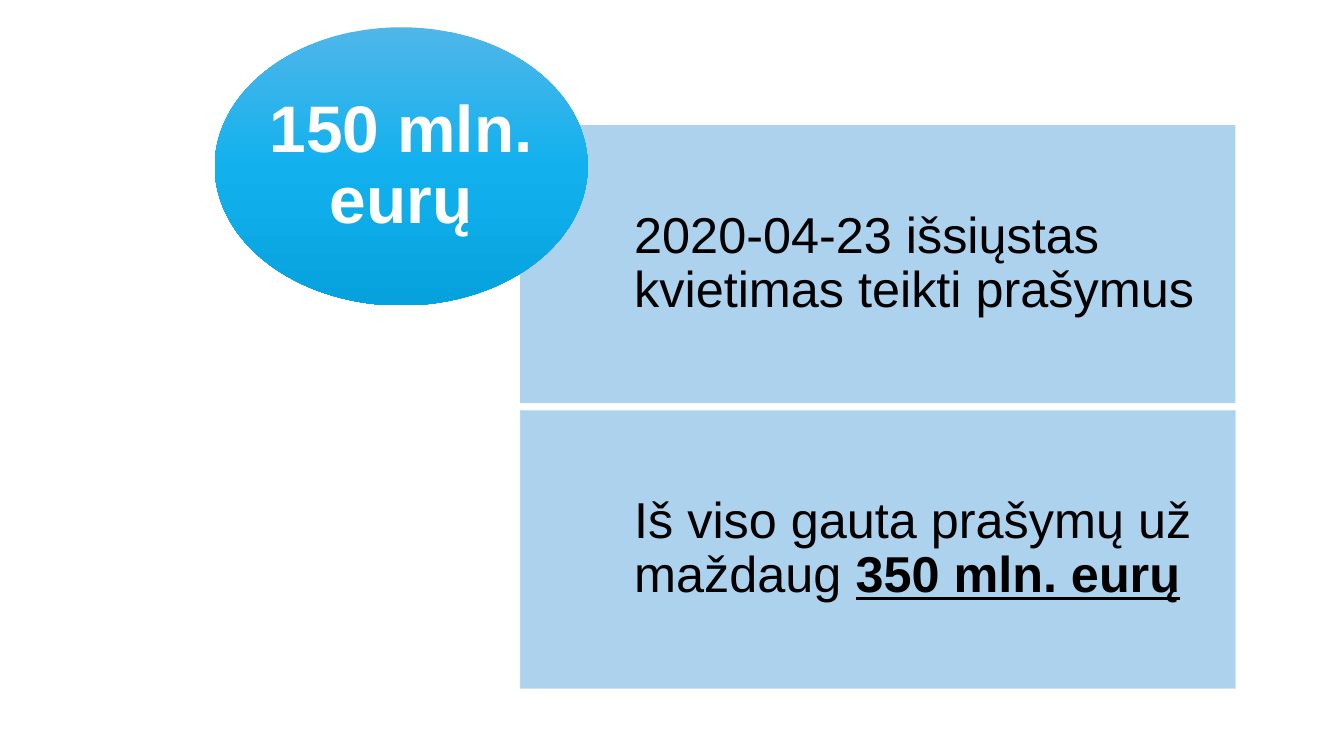
from lxml import etree
from pptx import Presentation
from pptx.dml.color import RGBColor
from pptx.enum.shapes import MSO_SHAPE
from pptx.enum.text import MSO_ANCHOR, PP_ALIGN
from pptx.oxml.ns import qn
from pptx.util import Pt

RECT, OVAL = MSO_SHAPE.RECTANGLE, MSO_SHAPE.OVAL
MIDDLE = MSO_ANCHOR.MIDDLE
LEFT, CENTER = PP_ALIGN.LEFT, PP_ALIGN.CENTER
HUES = {"panel": "A3CEED", "edge": "CDE3F5", "ink": "000000", "white": "FFFFFF",
        "light": "4FB6E9", "mid": "12B1EE", "deep": "06A2DD"}
FONT = "Arial"
CARDS = [
    [("2020-04-23 išsiųstas kvietimas teikti prašymus", False)],
    [("Iš viso gauta prašymų už maždaug ", False), ("350 mln. eurų", True)],
]


def hue(name):
    """Return the named colour."""
    return RGBColor.from_string(HUES[name])


def fade(fill_owner):
    """Make a solid fill or line 90 % opaque."""
    for tint in fill_owner.iter(qn("a:srgbClr")):
        etree.SubElement(tint, qn("a:alpha"), val="90000")


def add_form(slide, kind, box, pads):
    """Add a shape without shadow and line, with its text margins set."""
    form = slide.shapes.add_shape(kind, *map(Pt, box))
    form.shadow.inherit = False
    form.line.fill.background()
    frame = form.text_frame
    frame.word_wrap = True
    frame.vertical_anchor = MIDDLE
    (frame.margin_left, frame.margin_top,
     frame.margin_right, frame.margin_bottom) = map(Pt, pads)
    return form


def style(para, size, ink, align):
    """Set the font, spacing and alignment of a paragraph."""
    para.alignment = align
    para.line_spacing = 0.9
    para.font.name = FONT
    para.font.size = Pt(size)
    para.font.color.rgb = hue(ink)


def add_card(slide, box, parts, edged):
    """Draw a pale panel with text, where marked parts are stressed."""
    card = add_form(slide, RECT, box, (81.5, 20, 20, 20))
    card.fill.solid()
    card.fill.fore_color.rgb = hue("panel")
    if edged:
        card.line.color.rgb = hue("edge")
        card.line.width = Pt(0.5)
    fade(card.fill._xPr)
    para = card.text_frame.paragraphs[0]
    style(para, 36, "ink", LEFT)
    for words, strong in parts:
        run = para.add_run()
        run.text = words
        if strong:
            run.font.bold = run.font.underline = True


def add_cards(slide, box, gap):
    """Stack the panels evenly in the box."""
    left, top, width, height = box
    count = len(CARDS)
    tall = (height - gap * (count - 1)) / count
    for row, parts in enumerate(CARDS):
        spot = (left, top + row * (tall + gap), width, tall)
        add_card(slide, spot, parts, row > 0)


def add_badge(slide, box, words):
    """Draw the shaded oval with the sum."""
    badge = add_form(slide, OVAL, box, (0, 0, 0, 0))
    badge.fill.gradient()
    badge.fill.gradient_angle = 270
    stops = badge.fill._xPr.find(qn("a:gradFill")).find(qn("a:gsLst"))
    for stop in list(stops):
        stops.remove(stop)
    for place, name in ((0, "light"), (50, "mid"), (100, "deep")):
        stop = etree.SubElement(stops, qn("a:gs"), pos=str(place * 1000))
        etree.SubElement(stop, qn("a:srgbClr"), val=HUES[name])
    para = badge.text_frame.paragraphs[0]
    para.text = words
    style(para, 47, "white", CENTER)
    para.font.bold = True


def main():
    """Build and save the slide."""
    deck = Presentation()
    deck.slide_width, deck.slide_height = Pt(960), Pt(540)
    slide = deck.slides.add_slide(deck.slide_layouts[6])
    add_cards(slide, (371.5, 89.3, 511, 402.5), 5)
    add_badge(slide, (153.4, 19.5, 266.4, 198.7), "150 mln. eurų")
    deck.save("out.pptx")


if __name__ == "__main__":
    main()
